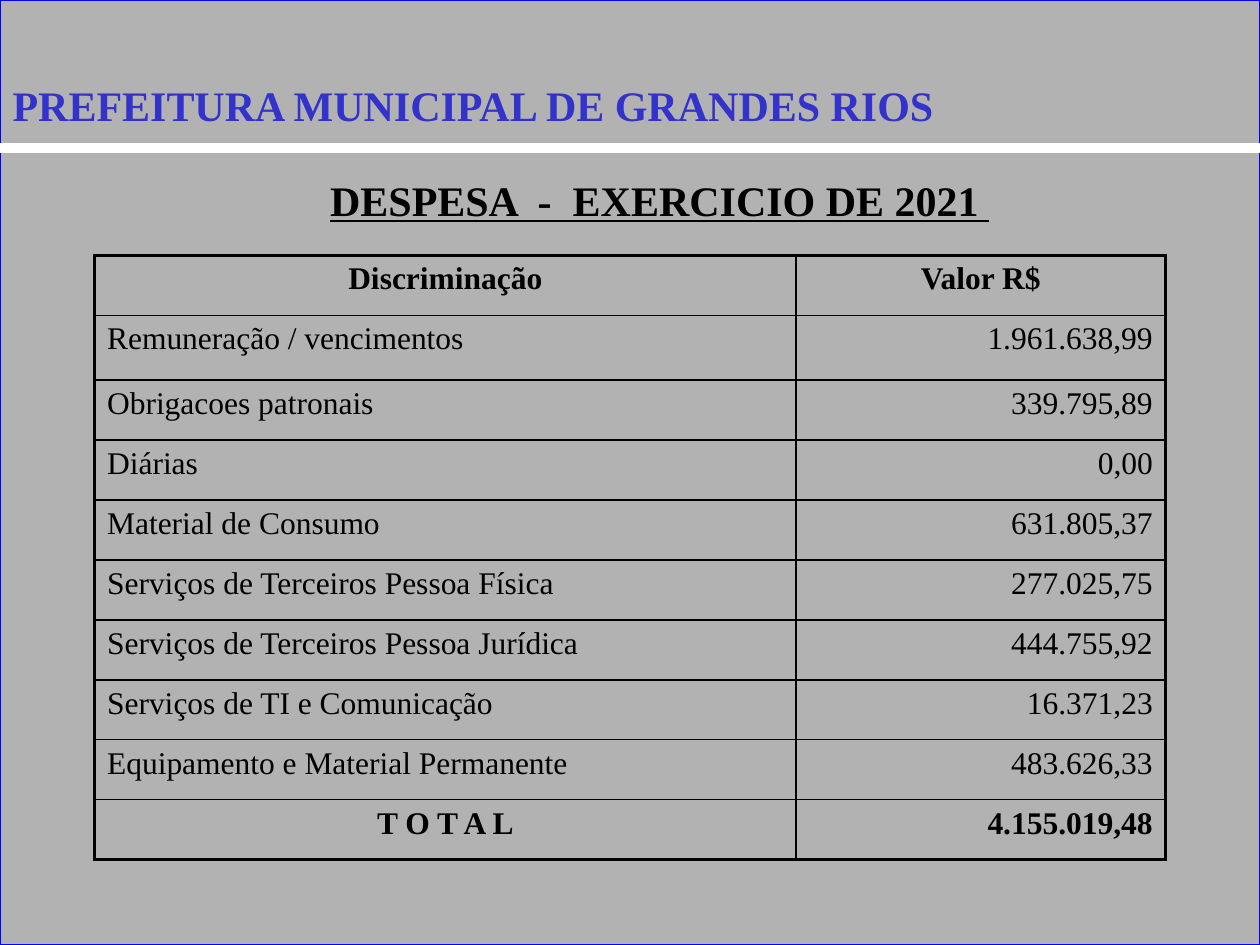
from pptx import Presentation
from pptx.dml.color import RGBColor
from pptx.enum.shapes import MSO_CONNECTOR, MSO_SHAPE
from pptx.enum.text import MSO_ANCHOR, MSO_AUTO_SIZE, PP_ALIGN
from pptx.oxml.ns import qn
from pptx.util import Pt
from lxml import etree

LEFT, CENTER, RIGHT = PP_ALIGN.LEFT, PP_ALIGN.CENTER, PP_ALIGN.RIGHT
TOP, NO_FIT = MSO_ANCHOR.TOP, MSO_AUTO_SIZE.NONE
RECT, STRAIGHT = MSO_SHAPE.RECTANGLE, MSO_CONNECTOR.STRAIGHT
GRAY = RGBColor(0xB2, 0xB2, 0xB2)
SHADOW = RGBColor(0x80, 0x80, 0x80)
BLUE = RGBColor(0x00, 0x00, 0xFF)
INDIGO = RGBColor(0x33, 0x33, 0xCC)
WHITE = RGBColor(0xFF, 0xFF, 0xFF)
BLACK = RGBColor(0x00, 0x00, 0x00)
FONT = "Times New Roman"

HEADER = "PREFEITURA MUNICIPAL DE GRANDES RIOS"
SUBTITLE = "DESPESA  -  EXERCICIO DE 2021 "
ROWS = [
    ("Discriminação", "Valor R$"),
    ("Remuneração / vencimentos", "1.961.638,99"),
    ("Obrigacoes patronais", "339.795,89"),
    ("Diárias", "0,00"),
    ("Material de Consumo", "631.805,37"),
    ("Serviços de Terceiros Pessoa Física", "277.025,75"),
    ("Serviços de Terceiros Pessoa Jurídica", "444.755,92"),
    ("Serviços de TI e Comunicação", "16.371,23"),
    ("Equipamento e Material Permanente", "483.626,33"),
    ("T O T A L", "4.155.019,48"),
]
WIDTH, HEIGHT = 720, 540
RULE_Y = 84.5
TABLE_X, TABLE_Y = 54, 146
COL_WIDTHS = (401, 211)
ROW_HEIGHT, FIRST_ITEM_HEIGHT = 34.25, 37
THIN, THICK = 1, 2.25


def write(tf, text, align, color=BLACK, **font):
    p = tf.paragraphs[0]
    p.alignment = align
    r = p.add_run()
    r.text = text
    for name, value in {"name": FONT, **font}.items():
        setattr(r.font, name, value)
    r.font.color.rgb = color
    return r


def setup_frame(tf):
    for name, value in {"word_wrap": True, "auto_size": NO_FIT, "vertical_anchor": TOP,
                        "margin_left": Pt(7.2), "margin_right": Pt(7.2),
                        "margin_top": Pt(3.6), "margin_bottom": Pt(3.6)}.items():
        setattr(tf, name, value)


def place(shape, x, y, w, h):
    shape.left, shape.top, shape.width, shape.height = Pt(x), Pt(y), Pt(w), Pt(h)


def add_color(parent, color):
    fill = etree.SubElement(parent, qn("a:solidFill"))
    etree.SubElement(fill, qn("a:srgbClr"), val=str(color))


def add_text_shadow(r):
    effects = etree.Element(qn("a:effectLst"))
    shadow = etree.SubElement(effects, qn("a:outerShdw"), dist="38100", dir="2700000")
    etree.SubElement(shadow, qn("a:srgbClr"), val=str(SHADOW))
    r.font._element.find(qn("a:solidFill")).addnext(effects)


def set_borders(cell, widths):
    tcPr = cell._tc.get_or_add_tcPr()
    for i, (side, width) in enumerate(widths.items()):
        ln = etree.Element(qn(f"a:ln{side}"), w=str(Pt(width)))
        add_color(ln, BLACK)
        tcPr.insert(i, ln)


prs = Presentation()
prs.slide_width, prs.slide_height = Pt(WIDTH), Pt(HEIGHT)
s = prs.slides.add_slide(prs.slide_layouts[5])

panel = s.shapes.add_shape(RECT, 0, 0, Pt(WIDTH), Pt(HEIGHT))
panel.shadow.inherit = False
panel.fill.solid()
panel.fill.fore_color.rgb = GRAY
panel.line.color.rgb = BLUE
panel.line.width = Pt(0.75)

rule = s.shapes.add_connector(STRAIGHT, 0, Pt(RULE_Y), Pt(WIDTH), Pt(RULE_Y))
rule.line.color.rgb = WHITE
rule.line.width = Pt(6)
etree.SubElement(rule._element.spPr, qn("a:effectLst"))

subtitle = s.shapes.add_textbox(Pt(99), Pt(96), Pt(556), Pt(80))
setup_frame(subtitle.text_frame)
write(subtitle.text_frame, SUBTITLE, CENTER, size=Pt(24), bold=True, underline=True)

title = s.shapes.title
s.shapes._spTree.append(title._element)
place(title, 0, 42, 593, 36)
setup_frame(title.text_frame)
add_text_shadow(write(title.text_frame, HEADER, LEFT, INDIGO, size=Pt(24), bold=True))

heights = [FIRST_ITEM_HEIGHT if i == 1 else ROW_HEIGHT for i in range(len(ROWS))]
table = s.shapes.add_table(len(ROWS), len(COL_WIDTHS), Pt(TABLE_X), Pt(TABLE_Y),
                           Pt(sum(COL_WIDTHS)), Pt(sum(heights))).table
table.first_row = table.horz_banding = False
for column, width in zip(table.columns, COL_WIDTHS):
    column.width = Pt(width)
last = len(ROWS) - 1
for i, row in enumerate(ROWS):
    table.rows[i].height = Pt(heights[i])
    for j, text in enumerate(row):
        cell = table.cell(i, j)
        cell.fill.background()
        cell.vertical_anchor = TOP
        set_borders(cell, {"L": THIN if j else THICK, "R": THICK if j else THIN,
                           "T": THIN if i else THICK, "B": THICK if i == last else THIN})
        if i == 0 or (i == last and j == 0):
            align = CENTER
        else:
            align = RIGHT if j else LEFT
        write(cell.text_frame, text, align, size=Pt(18), bold=i in (0, last))

prs.save("out.pptx")
